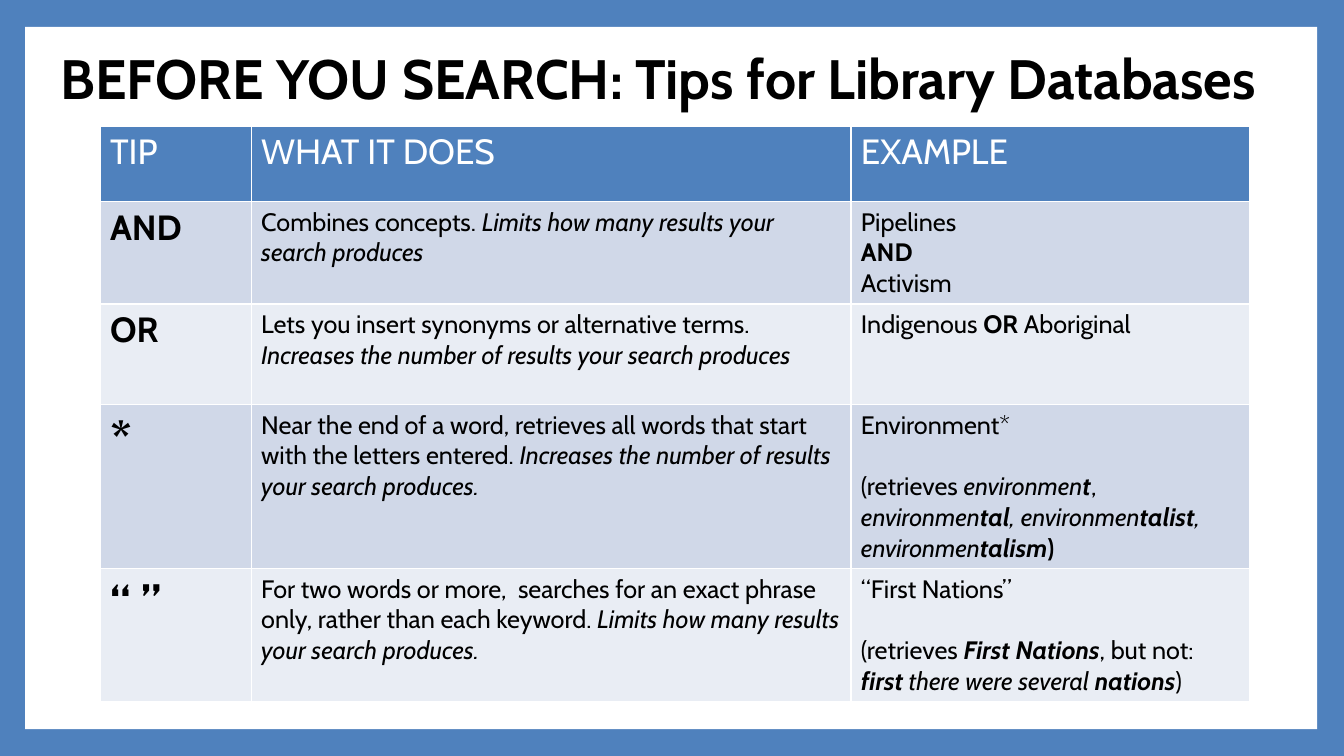
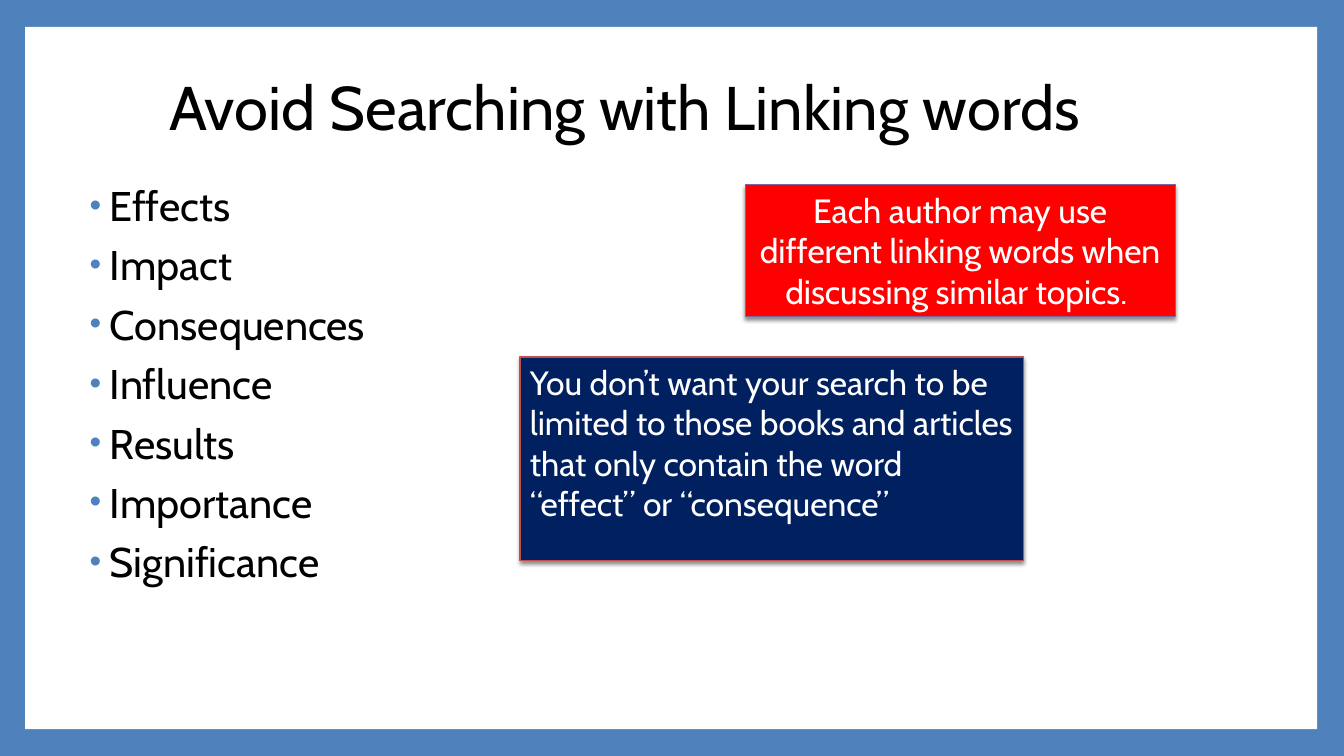
from dataclasses import dataclass
from typing import NamedTuple

from lxml.etree import SubElement
from pptx import Presentation
from pptx.dml.color import RGBColor
from pptx.enum.shapes import MSO_SHAPE
from pptx.enum.text import MSO_ANCHOR, PP_ALIGN
from pptx.oxml.ns import qn
from pptx.util import Emu, Inches, Pt

COLORS = {
    "blue": "4F81BD", "white": "FFFFFF", "black": "000000", "red": "FF0000",
    "navy": "002060", "purple": "8064A2", "brick": "C0504D",
    "band_dark": "D0D8E8", "band_light": "E9EDF4",
}
FONT = "Cabin"
COLUMNS, ROWS = 160, 90
UNIT = Inches(7.5) / ROWS


class Area(NamedTuple):
    """Place and size in grid columns and rows."""
    left: float
    top: float
    width: float
    height: float


class Span(NamedTuple):
    """Text with a style made of the letters b and i."""
    text: str
    style: str = ""


@dataclass(frozen=True)
class Tip:
    """One table row: symbol, its size, purpose, effect and example lines."""
    symbol: str
    size: float
    purpose: str
    effect: str
    example: list[list[Span]]
    gap: float = 0


@dataclass(frozen=True)
class Callout:
    """A filled note with a thin outline."""
    text: str
    area: Area
    fill: str
    line: str
    align: PP_ALIGN


PANEL = Area(3, 3.2, 153.8, 83.6)
TABLE_LEFT, TABLE_TOP = 11.9, 15
COLUMN_WIDTHS = (18, 71.4, 47.5)
ROW_HEIGHTS = (9, 12, 12, 15.6, 15.6)
HEADINGS = ("TIP", "WHAT IT DOES", "EXAMPLE")
TIPS = [
    Tip("AND", 25, "Combines concepts. ",
        "Limits how many results your search produces",
        [[Span("Pipelines")], [Span("AND", "b")], [Span("Activism")]]),
    Tip("OR", 25, "Lets you insert synonyms or alternative terms. ",
        "Increases the number of results your search produces",
        [[Span("Indigenous "), Span("OR", "b"), Span(" Aboriginal")]]),
    Tip("*", 35,
        "Near the end of a word, retrieves all words that start with the letters entered. ",
        "Increases the number of results your search produces.",
        [[Span("Environment*")],
         [Span("(retrieves "), Span("environmen", "i"), Span("t", "bi"), Span(", "),
          Span("environmen", "i"), Span("tal", "bi"), Span(", environmen", "i"),
          Span("talist", "bi"), Span(", environmen", "i"), Span("talism", "bi"),
          Span(")", "b")]], gap=22),
    Tip("“ ”", 35,
        "For two words or more,  searches for an exact phrase only, rather than each keyword. ",
        "Limits how many results your search produces.",
        [[Span("“First Nations”")],
         [Span("(retrieves "), Span("First Nations", "bi"), Span(", but not: "),
          Span("first", "bi"), Span(" there were several ", "i"),
          Span("nations", "bi"), Span(")")]], gap=22),
]
LINKING_WORDS = ("Effects", "Impact", "Consequences", "Influence", "Results",
                 "Importance", "Significance")
CALLOUTS = [
    Callout("Each author may use different linking words when discussing similar topics. ",
            Area(88.7, 22, 51.2, 15.7), "red", "purple", PP_ALIGN.CENTER),
    Callout("You don’t want your search to be limited to those books and articles "
            "that only contain the word “effect” or “consequence”",
            Area(61.9, 42.5, 59.9, 24.2), "navy", "brick", PP_ALIGN.LEFT),
]


def grid(*cells: float) -> list[Emu]:
    """Turn grid cells into lengths."""
    return [Emu(round(cell * UNIT)) for cell in cells]


def paint(fill, color: str) -> None:
    """Give a fill one solid colour."""
    fill.solid()
    fill.fore_color.rgb = RGBColor.from_string(COLORS[color])


def format_run(run, size: float, color: str, style: str = "") -> None:
    """Set font, size, colour, weight and slant of a run."""
    run.font.name = FONT
    run.font.size = Pt(size)
    run.font.color.rgb = RGBColor.from_string(COLORS[color])
    run.font.bold = "b" in style
    run.font.italic = "i" in style


def format_frame(frame, size: float, color: str, style: str = "") -> None:
    """Format every run in a text frame."""
    for para in frame.paragraphs:
        for run in para.runs:
            format_run(run, size, color, style)


def add_rectangle(page, area: Area, fill: str):
    """Add a plain filled rectangle without shadow or outline."""
    box = page.shapes.add_shape(MSO_SHAPE.RECTANGLE, *grid(*area))
    paint(box.fill, fill)
    box.line.fill.background()
    box.shadow.inherit = False
    return box


def add_page(deck):
    """Add a blank page with the blue frame and white panel."""
    page = deck.slides.add_slide(deck.slide_layouts[6])
    paint(page.background.fill, "blue")
    add_rectangle(page, PANEL, "white")
    return page


def add_text(page, area: Area, text: str, size: float, style: str = ""):
    """Add a wrapping black text box and return its frame."""
    frame = page.shapes.add_textbox(*grid(*area)).text_frame
    frame.word_wrap = True
    frame.text = text
    format_frame(frame, size, "black", style)
    return frame


def add_title(page, area: Area, text: str, size: float, style: str = "",
              align: PP_ALIGN = PP_ALIGN.LEFT) -> None:
    """Add a title centred on the height of its area."""
    frame = add_text(page, area, text, size, style)
    frame.vertical_anchor = MSO_ANCHOR.MIDDLE
    frame.paragraphs[0].alignment = align
    frame.paragraphs[0].line_spacing = 0.9


def style_cell(cell, fill: str) -> None:
    """Give a table cell white borders and a fill."""
    properties = cell._tc.get_or_add_tcPr()
    for side in ("a:lnL", "a:lnR", "a:lnT", "a:lnB"):
        line = SubElement(properties, qn(side), w=str(Pt(1)))
        solid = SubElement(line, qn("a:solidFill"))
        SubElement(solid, qn("a:srgbClr"), val=COLORS["white"])
    paint(cell.fill, fill)


def write_lines(cell, lines: list[list[Span]], size: float, color: str,
                gap: float = 0) -> None:
    """Write styled lines into a cell, with a gap before later lines."""
    for index, spans in enumerate(lines):
        frame = cell.text_frame
        para = frame.add_paragraph() if index else frame.paragraphs[0]
        if index and gap:
            para.space_before = Pt(gap)
        for span in spans:
            run = para.add_run()
            run.text = span.text
            format_run(run, size, color, span.style)


def add_tip_table(page) -> None:
    """Add the table of search tips."""
    area = Area(TABLE_LEFT, TABLE_TOP, sum(COLUMN_WIDTHS), sum(ROW_HEIGHTS))
    table = page.shapes.add_table(len(ROW_HEIGHTS), len(COLUMN_WIDTHS), *grid(*area)).table
    table.first_row = table.horz_banding = False
    for column, width in zip(table.columns, grid(*COLUMN_WIDTHS)):
        column.width = width
    for row, height in zip(table.rows, grid(*ROW_HEIGHTS)):
        row.height = height
    for cell, heading in zip(table.rows[0].cells, HEADINGS):
        style_cell(cell, "blue")
        write_lines(cell, [[Span(heading)]], 25, "white")
    for index, tip in enumerate(TIPS):
        symbol, purpose, example = table.rows[index + 1].cells
        for cell in (symbol, purpose, example):
            style_cell(cell, "band_light" if index % 2 else "band_dark")
        write_lines(symbol, [[Span(tip.symbol, "b")]], tip.size, "black")
        write_lines(purpose, [[Span(tip.purpose), Span(tip.effect, "i")]], 18, "black")
        write_lines(example, tip.example, 18, "black", tip.gap)


def add_bullets(page, area: Area, words: tuple[str, ...]) -> None:
    """Add a list with small blue bullets."""
    for para in add_text(page, area, "\n".join(words), 29.6).paragraphs:
        para.line_spacing = 0.8
        para.space_before = Pt(14)
        properties = para._p.get_or_add_pPr()
        properties.set("marL", str(Inches(0.25)))
        properties.set("indent", str(Inches(-0.2)))
        color = SubElement(properties, qn("a:buClr"))
        SubElement(color, qn("a:srgbClr"), val=COLORS["blue"])
        SubElement(properties, qn("a:buSzPct"), val="80000")
        SubElement(properties, qn("a:buFont"), typeface="Arial")
        SubElement(properties, qn("a:buChar"), char="•")


def add_callout(page, callout: Callout) -> None:
    """Add an outlined note with a soft shadow below."""
    box = add_rectangle(page, callout.area, callout.fill)
    paint(box.line.fill, callout.line)
    box.line.width = Pt(0.79)
    effects = box.element.spPr.find(qn("a:effectLst"))
    shadow = SubElement(effects, qn("a:outerShdw"), blurRad=str(Pt(3)),
                        dist=str(Pt(2)), dir="5400000", rotWithShape="0")
    color = SubElement(shadow, qn("a:srgbClr"), val=COLORS["black"])
    SubElement(color, qn("a:alpha"), val="45000")
    frame = box.text_frame
    frame.word_wrap = True
    frame.vertical_anchor = MSO_ANCHOR.TOP
    frame.text = callout.text
    frame.paragraphs[0].alignment = callout.align
    format_frame(frame, 24, "white")


def build_tips(deck) -> None:
    """Build the page of database search tips."""
    page = add_page(deck)
    add_tip_table(page)
    add_title(page, Area(6, 2.2, 146, 15),
              "BEFORE YOU SEARCH: Tips for Library Databases", 39.6, "b")


def build_linking_words(deck) -> None:
    """Build the page on linking words."""
    page = add_page(deck)
    add_title(page, Area(18, 4.6, 112.8, 17.2),
              "Avoid Searching with Linking words", 44, align=PP_ALIGN.CENTER)
    add_bullets(page, Area(8.9, 22, 112.8, 50.9), LINKING_WORDS)
    for callout in CALLOUTS:
        add_callout(page, callout)


def main() -> None:
    """Build and save the deck."""
    deck = Presentation()
    deck.slide_width, deck.slide_height = grid(COLUMNS, ROWS)
    build_tips(deck)
    build_linking_words(deck)
    deck.save("out.pptx")


if __name__ == "__main__":
    main()
